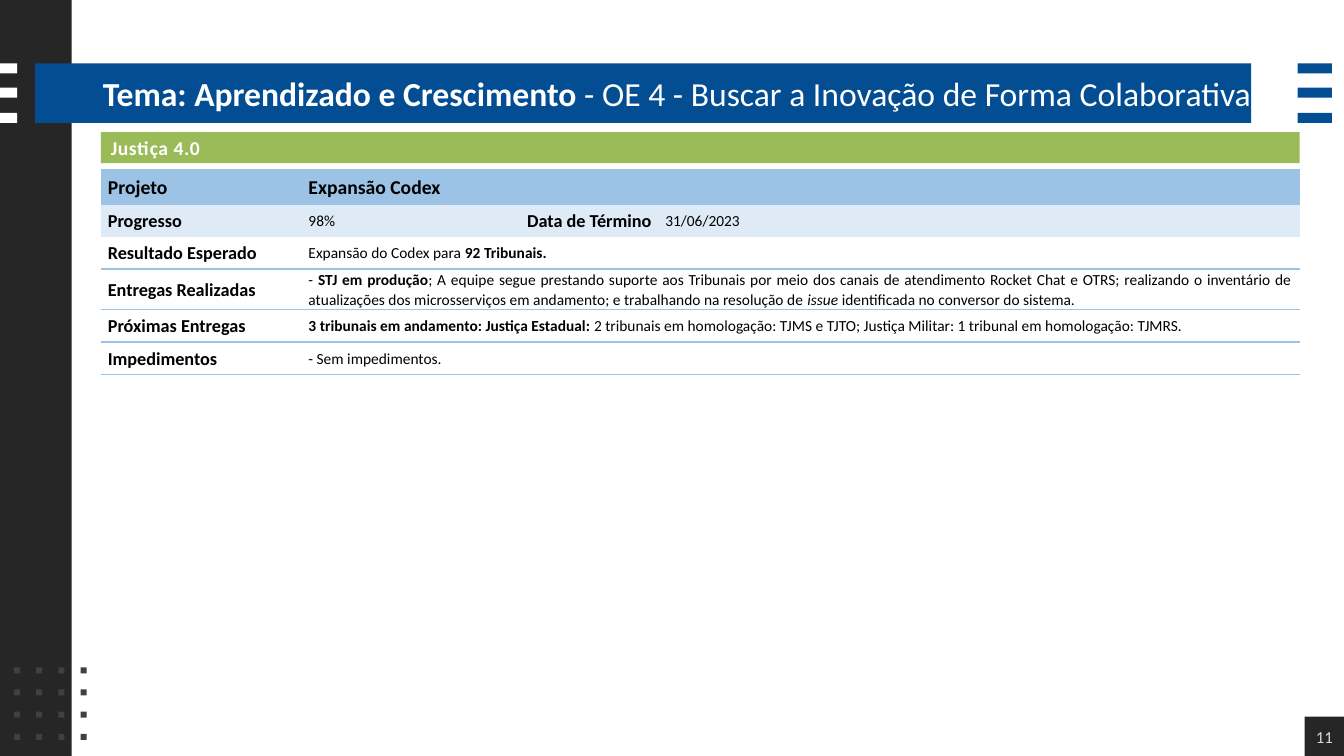
from dataclasses import dataclass
from itertools import product

from lxml.etree import SubElement
from pptx import Presentation
from pptx.dml.color import RGBColor
from pptx.enum.shapes import MSO_SHAPE
from pptx.enum.text import MSO_ANCHOR, MSO_AUTO_SIZE, PP_ALIGN
from pptx.oxml import parse_xml
from pptx.oxml.ns import nsdecls, qn
from pptx.util import Inches, Pt

FONT = "Calibri"
BLUE, DARK, WHITE, BLACK = "034D92", "262626", "FFFFFF", "000000"
GREEN, DOT_GRAY, NUMBER_GRAY = "9BBB59", "404040", "D9D9D9"
HEADER_BLUE, PALE_BLUE = "9CC2E5", "DEEAF6"
NO_GRID_STYLE = "{2D5ABB26-0587-4C30-8999-92F81FD0307C}"


@dataclass
class Block:
    left: float
    top: float
    width: float
    height: float
    fill: str


@dataclass
class Span:
    text: str
    bold: bool = False
    italic: bool = False


@dataclass
class Entry:
    row: int
    column: int
    spans: list[Span]
    size: float
    align: PP_ALIGN = PP_ALIGN.LEFT


def color(value: str) -> RGBColor:
    return RGBColor.from_string(value)


def draw_block(page, block: Block):
    shape = page.shapes.add_shape(
        MSO_SHAPE.RECTANGLE, Inches(block.left), Inches(block.top),
        Inches(block.width), Inches(block.height))
    shape.shadow.inherit = False
    shape.fill.solid()
    shape.fill.fore_color.rgb = color(block.fill)
    shape.line.fill.background()
    return shape


def write_spans(para, spans: list[Span], size: float, text_color: str, align=PP_ALIGN.LEFT) -> None:
    para.alignment = align
    for span in spans:
        run = para.add_run()
        run.text = span.text
        run.font.name = FONT
        run.font.size = Pt(size)
        run.font.bold = span.bold
        run.font.italic = span.italic
        run.font.color.rgb = color(text_color)


def draw_border(cell, side: str) -> None:
    cell._tc.get_or_add_tcPr().insert(0, parse_xml(
        f'<a:{side} {nsdecls("a")} w="12700"><a:solidFill>'
        f'<a:srgbClr val="{HEADER_BLUE}"/></a:solidFill></a:{side}>'))


def draw_decoration(page) -> None:
    draw_block(page, Block(0, 0, 0.71, 7.5, DARK))
    draw_block(page, Block(0.35, 0.63, 12.06, 0.59, BLUE))
    for left, width, fill in ((0, 0.17, WHITE), (12.87, 0.34, BLUE)):
        for top in (0.63, 0.87, 1.12):
            draw_block(page, Block(left, top, width, 0.1, fill))
    for row, column in product(range(4), range(4)):
        draw_block(page, Block(0.14 + 0.22 * column, 6.62 + 0.22 * row, 0.06, 0.06, DOT_GRAY))


def draw_title(page) -> None:
    title = page.shapes.title
    title.left, title.top = Inches(0.92), Inches(0.64)
    title.width, title.height = Inches(11.89), Inches(0.56)
    frame = title.text_frame
    frame.word_wrap = True
    frame.auto_size = MSO_AUTO_SIZE.NONE
    frame.vertical_anchor = MSO_ANCHOR.MIDDLE
    write_spans(frame.paragraphs[0], [
        Span("Tema: Aprendizado e Crescimento ", bold=True),
        Span("- OE 4 - Buscar a Inovação de Forma Colaborativa"),
    ], 24, WHITE)
    page.shapes._spTree.append(title._element)


def draw_page_number(page) -> None:
    frame = draw_block(page, Block(12.94, 7.11, 0.39, 0.39, DARK)).text_frame
    frame.margin_left = frame.margin_right = frame.margin_top = frame.margin_bottom = 0
    frame.vertical_anchor = MSO_ANCHOR.MIDDLE
    write_spans(frame.paragraphs[0], [Span("11")], 12, NUMBER_GRAY, PP_ALIGN.CENTER)


def draw_program_band(page) -> None:
    frame = draw_block(page, Block(1, 1.31, 11.89, 0.31, GREEN)).text_frame
    frame.vertical_anchor = MSO_ANCHOR.MIDDLE
    para = frame.paragraphs[0]
    write_spans(para, [Span("Justiça 4.0", bold=True)], 14, WHITE)
    para.runs[0].font._element.set("spc", "40")


def draw_project_table(page, entries: list[Entry]) -> None:
    widths = (1.99, 1.77, 1.77, 6.36)
    heights = (0.35,) + (0.32,) * 5
    table = page.shapes.add_table(
        len(heights), len(widths), Inches(1), Inches(1.68),
        Inches(sum(widths)), Inches(sum(heights))).table
    table.first_row = table.horz_banding = False
    properties = table._tbl.tblPr
    style = properties.find(qn("a:tableStyleId"))
    if style is None:
        style = SubElement(properties, qn("a:tableStyleId"))
    style.text = NO_GRID_STYLE
    for column, width in zip(table.columns, widths):
        column.width = Inches(width)
    for row, height in zip(table.rows, heights):
        row.height = Inches(height)
    for row, column in product(range(len(heights)), range(len(widths))):
        cell = table.cell(row, column)
        cell.margin_left = cell.margin_right = Inches(0.07)
        cell.margin_top = cell.margin_bottom = 0
        cell.vertical_anchor = MSO_ANCHOR.MIDDLE
        if row < 2:
            cell.fill.solid()
            cell.fill.fore_color.rgb = color((HEADER_BLUE, PALE_BLUE)[row])
        else:
            cell.fill.background()
            draw_border(cell, "lnB")
            if row > 2:
                draw_border(cell, "lnT")
    for row in range(len(heights)):
        if row != 1:
            table.cell(row, 1).merge(table.cell(row, 3))
    for entry in entries:
        para = table.cell(entry.row, entry.column).text_frame.paragraphs[0]
        para.line_spacing = 1.07
        para.space_after = Pt(8)
        write_spans(para, entry.spans, entry.size, BLACK, entry.align)


LABELS = ("Projeto", "Progresso", "Resultado Esperado",
          "Entregas Realizadas", "Próximas Entregas", "Impedimentos")

DETAILS = [
    [Span("Expansão do Codex para "), Span("92 Tribunais.", bold=True)],
    [Span("- "), Span("STJ em produção", bold=True),
     Span("; A equipe segue prestando suporte aos Tribunais por meio dos canais de "
          "atendimento Rocket Chat e OTRS; realizando o inventário de atualizações dos "
          "microsserviços em andamento; e trabalhando na resolução de "),
     Span("issue ", italic=True), Span("identificada no conversor do sistema.")],
    [Span("3 tribunais em andamento: Justiça Estadual: ", bold=True),
     Span("2 tribunais em homologação: TJMS e TJTO; Justiça Militar: "
          "1 tribunal em homologação: TJMRS.")],
    [Span("- Sem impedimentos.")],
]


def main() -> None:
    deck = Presentation()
    deck.slide_width, deck.slide_height = Inches(13.33), Inches(7.5)
    page = deck.slides.add_slide(deck.slide_layouts[5])
    draw_decoration(page)
    draw_title(page)
    draw_page_number(page)
    draw_program_band(page)
    entries = [Entry(row, 0, [Span(label, bold=True)], 13 if row else 14)
               for row, label in enumerate(LABELS)]
    entries += [
        Entry(0, 1, [Span("Expansão Codex", bold=True)], 14),
        Entry(1, 1, [Span("98%")], 11),
        Entry(1, 2, [Span("Data de Término", bold=True)], 13, PP_ALIGN.RIGHT),
        Entry(1, 3, [Span("31/06/2023")], 11),
    ]
    entries += [Entry(row, 1, spans, 11, PP_ALIGN.JUSTIFY)
                for row, spans in enumerate(DETAILS, start=2)]
    draw_project_table(page, entries)
    deck.save("out.pptx")


if __name__ == "__main__":
    main()
